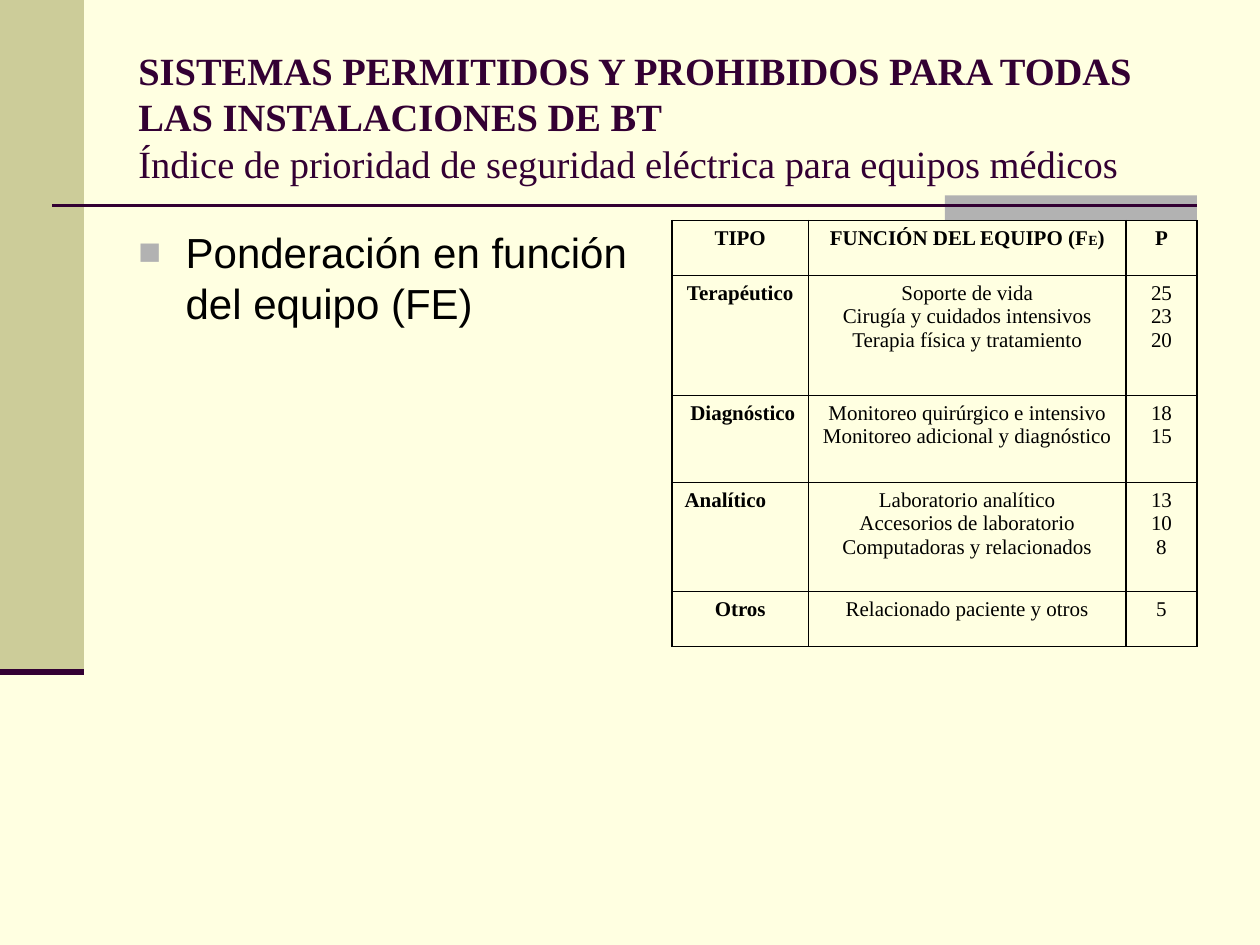
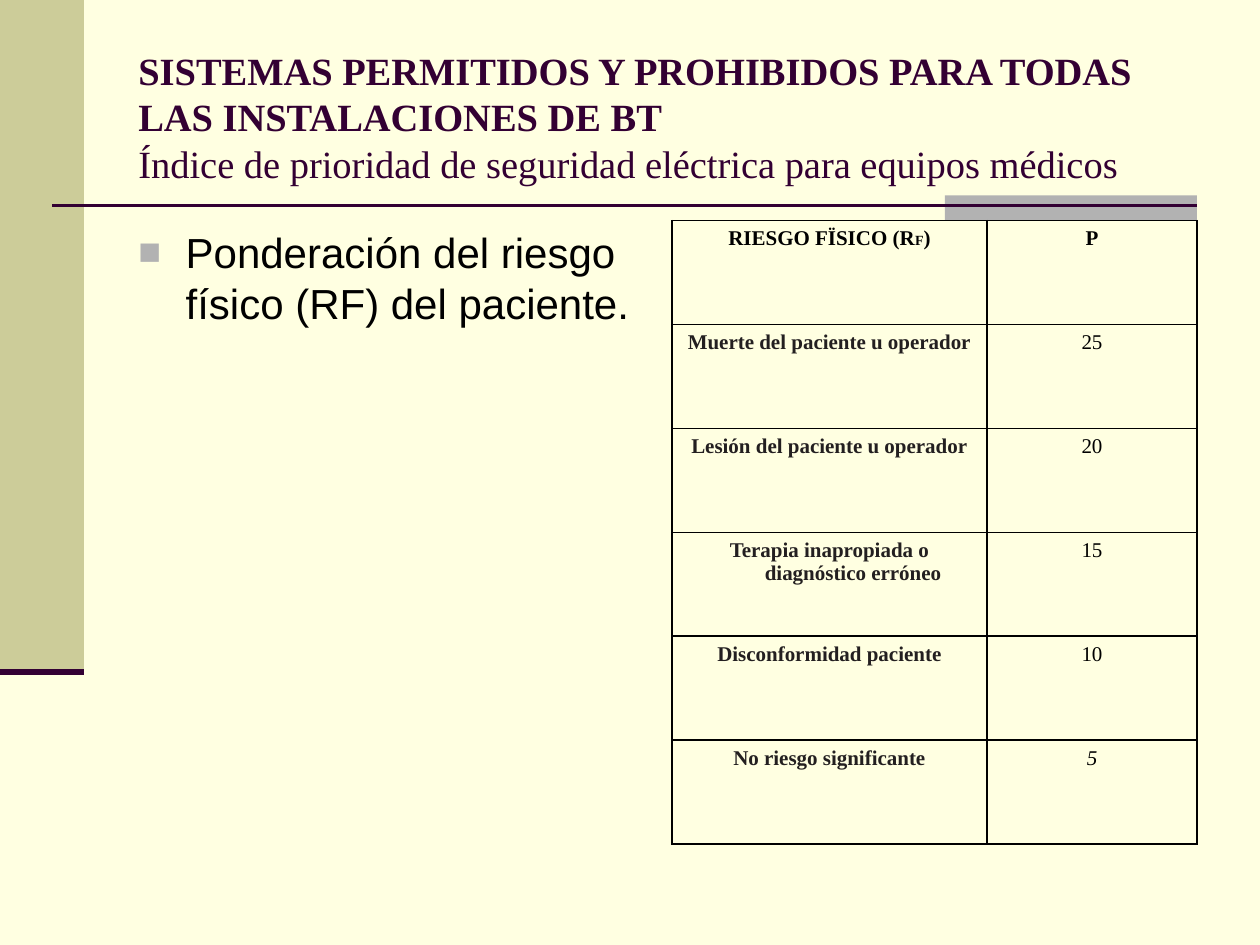
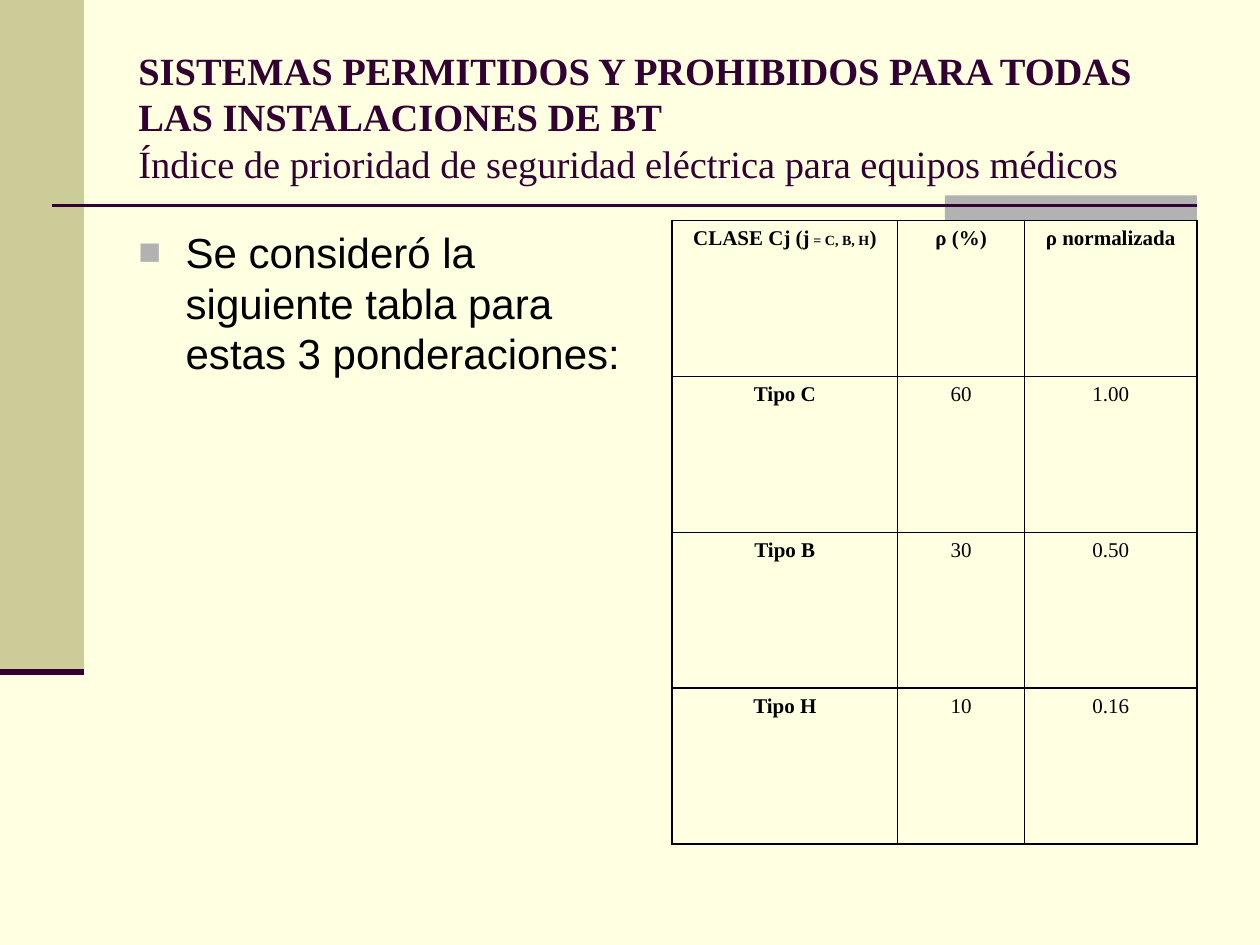
"""Build three slides on the electrical safety priority index for medical equipment."""
import pptx
import pptx.dml.color
import pptx.enum.shapes
import pptx.enum.text
import pptx.oxml
import pptx.oxml.ns
import pptx.util

Pt = pptx.util.Pt
ALIGN = pptx.enum.text.PP_ALIGN
ANCHOR = pptx.enum.text.MSO_ANCHOR

COLORS = {
    "background": "FFFFE1",
    "side_band": "CCCC99",
    "accent": "B2B2B2",
    "plum": "330033",
    "black": "000000",
    "ink": "231F20",
}
SERIF, SANS = "Times New Roman", "Arial"
HANGING = 27
CONTENT_TOP = 126
TABLE_LEFT = 384

TITLE = "SISTEMAS PERMITIDOS Y PROHIBIDOS PARA TODAS LAS INSTALACIONES DE BT "
SUBTITLE = "Índice de prioridad de seguridad eléctrica para equipos médicos"

BANDS = [
    ("side_band", (0, 0, 48, 384)),
    ("accent", (540, 111.6, 144, 14.4)),
]
RULES = [
    ((30, 117.6), (684, 117.6), 1.5),
    ((0, 384), (48, 384), 3.5),
]

SLIDES = [
    {
        "point": "Ponderación en función del equipo (FE)",
        "columns": [78, 181.5, 40.5],
        "heights": [31.5, 68.5, 49.7, 62.3, 31.5],
        "header": [("TIPO",), ("FUNCIÓN DEL EQUIPO (F", "E", ")"), ("Ρ",)],
        "rows": [
            ("Terapéutico",
             "Soporte de vida\nCirugía y cuidados intensivos\nTerapia física y tratamiento",
             "25\n23\n20"),
            (" Diagnóstico",
             "Monitoreo quirúrgico e intensivo\nMonitoreo adicional y diagnóstico",
             "18\n15"),
            ("Analítico",
             "Laboratorio analítico\nAccesorios de laboratorio\nComputadoras y relacionados",
             "13\n10\n8"),
            ("Otros", "Relacionado paciente y otros", "5"),
        ],
        "left_aligned": {"Analítico"},
    },
    {
        "point": "Ponderación del riesgo físico (RF) del paciente.",
        "columns": [180, 120],
        "heights": [59.4] * 6,
        "header": [("RIESGO FÏSICO (R", "F", ")"), ("Ρ",)],
        "rows": [
            ("Muerte del paciente u operador", "25"),
            ("Lesión del paciente u operador", "20"),
            ("Terapia inapropiada o diagnóstico erróneo", "15"),
            ("Disconformidad paciente", "10"),
            ("No riesgo significante", "5"),
        ],
        "label_color": "ink",
        "italic": {"5"},
    },
    {
        "point": "Se consideró la siguiente tabla para estas 3 ponderaciones:",
        "columns": [129, 72.5, 98.5],
        "heights": [89.1] * 4,
        "header": [("CLASE Cj (j", " = C, B, H", ")"), ("ρ (%)",), ("ρ normalizada",)],
        "rows": [
            ("Tipo C", "60", "1.00"),
            ("Tipo B", "30", "0.50"),
            ("Tipo H", "10", "0.16"),
        ],
    },
]


def rgb(name):
    return pptx.dml.color.RGBColor.from_string(COLORS[name])


def add_xml(parent, tag, content="", **attributes):
    listed = "".join(f' {key}="{value}"' for key, value in attributes.items())
    namespace = pptx.oxml.ns.nsdecls("a")
    parent.append(pptx.oxml.parse_xml(f"<a:{tag} {namespace}{listed}>{content}</a:{tag}>"))


def add_run(paragraph, text, size, font=SERIF, color="black", bold=False, italic=False):
    run = paragraph.add_run()
    run.text = text
    run.font.name = font
    run.font.size = Pt(size)
    run.font.bold = bold
    run.font.italic = italic
    run.font.color.rgb = rgb(color)


def hang(paragraph):
    properties = paragraph._p.get_or_add_pPr()
    properties.set("marL", str(Pt(HANGING)))
    properties.set("indent", str(-Pt(HANGING)))
    return properties


def add_text_box(slide, box, anchor):
    frame = slide.shapes.add_textbox(*map(Pt, box)).text_frame
    frame.word_wrap = True
    frame.vertical_anchor = anchor
    return frame.paragraphs[0]


def add_decoration(slide):
    for color, box in BANDS:
        band = slide.shapes.add_shape(pptx.enum.shapes.MSO_SHAPE.RECTANGLE, *map(Pt, box))
        band.shadow.inherit = False
        band.fill.solid()
        band.fill.fore_color.rgb = rgb(color)
        band.line.fill.background()
    for start, end, width in RULES:
        rule = slide.shapes.add_connector(
            pptx.enum.shapes.MSO_CONNECTOR.STRAIGHT, *map(Pt, start + end))
        rule.line.color.rgb = rgb("plum")
        rule.line.width = Pt(width)
        add_xml(rule._element.spPr, "effectLst")


def add_title(slide):
    paragraph = add_text_box(slide, (72, 21.6, 612, 90), ANCHOR.MIDDLE)
    add_run(paragraph, TITLE, 22, color="plum", bold=True)
    paragraph.add_line_break()
    add_run(paragraph, SUBTITLE, 22, color="plum")


def add_point(slide, text):
    paragraph = add_text_box(slide, (72, CONTENT_TOP, 300, 356.4), ANCHOR.TOP)
    paragraph.space_before = Pt(4.8)
    properties = hang(paragraph)
    add_xml(properties, "buClr", f'<a:srgbClr val="{COLORS["accent"]}"/>')
    add_xml(properties, "buSzPct", val=90000)
    add_xml(properties, "buFont", typeface=SANS)
    add_xml(properties, "buChar", char="■")
    add_run(paragraph, text, 24, font=SANS)


def style_cell(cell):
    properties = cell._tc.get_or_add_tcPr()
    line = f'<a:solidFill><a:srgbClr val="{COLORS["black"]}"/></a:solidFill>'
    for side in ("lnL", "lnR", "lnT", "lnB"):
        add_xml(properties, side, line, w=Pt(1))
    cell.fill.background()


def cell_paragraph(cell, index, alignment=ALIGN.CENTER):
    frame = cell.text_frame
    paragraph = frame.add_paragraph() if index else frame.paragraphs[0]
    paragraph.alignment = alignment
    hang(paragraph)
    return paragraph


def add_table(slide, content):
    columns, heights = content["columns"], content["heights"]
    box = (TABLE_LEFT, CONTENT_TOP, sum(columns), sum(heights))
    table = slide.shapes.add_table(len(heights), len(columns), *map(Pt, box)).table
    table.first_row = table.horz_banding = False
    for column, width in zip(table.columns, columns):
        column.width = Pt(width)
    for row, height in zip(table.rows, heights):
        row.height = Pt(height)
    for cell in table.iter_cells():
        style_cell(cell)

    for column, parts in enumerate(content["header"]):
        paragraph = cell_paragraph(table.cell(0, column), 0)
        for index, part in enumerate(parts):
            add_run(paragraph, part, 8 if index % 2 else 12, bold=True)

    for row, values in enumerate(content["rows"], 1):
        for column, value in enumerate(values):
            is_label = column == 0
            left = value in content.get("left_aligned", ())
            for index, text in enumerate(value.split("\n")):
                paragraph = cell_paragraph(
                    table.cell(row, column), index, ALIGN.LEFT if left else ALIGN.CENTER)
                add_run(paragraph, text, 12, bold=is_label,
                        color=content.get("label_color", "black") if is_label else "black",
                        italic=text in content.get("italic", ()))


def main():
    presentation = pptx.Presentation()
    presentation.slide_width, presentation.slide_height = Pt(720), Pt(540)
    background = presentation.slide_master.background.fill
    background.solid()
    background.fore_color.rgb = rgb("background")
    for content in SLIDES:
        slide = presentation.slides.add_slide(presentation.slide_layouts[6])
        add_decoration(slide)
        add_title(slide)
        add_point(slide, content["point"])
        add_table(slide, content)
    presentation.save("out.pptx")


if __name__ == "__main__":
    main()
